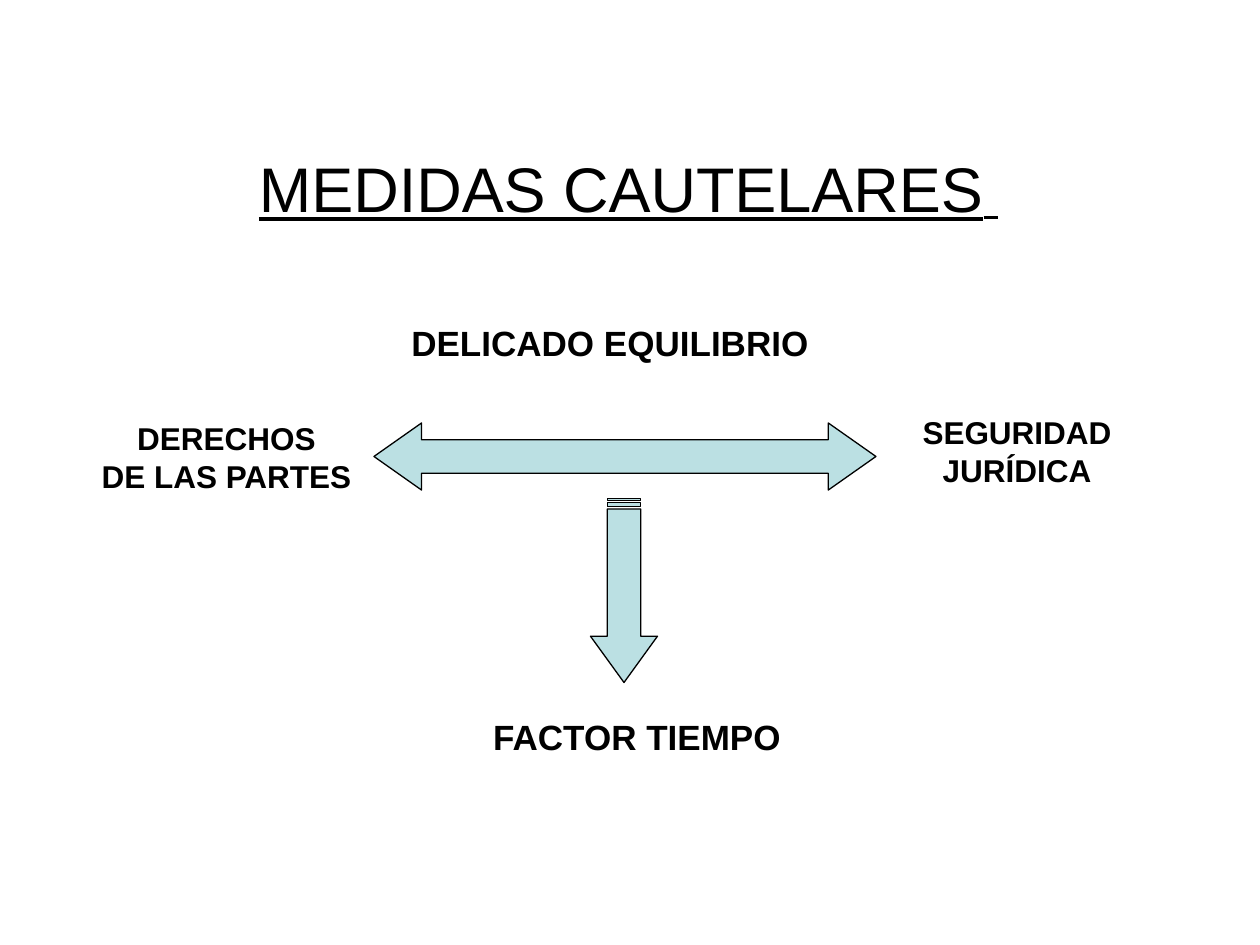
from dataclasses import dataclass

from pptx import Presentation
from pptx.dml.color import RGBColor
from pptx.enum.shapes import MSO_SHAPE
from pptx.enum.text import MSO_ANCHOR, PP_ALIGN
from pptx.slide import Slide
from pptx.util import Emu, Pt

CENTER = PP_ALIGN.CENTER
TOP = MSO_ANCHOR.TOP
MIDDLE = MSO_ANCHOR.MIDDLE
DOUBLE = MSO_SHAPE.LEFT_RIGHT_ARROW
STRIPED = MSO_SHAPE.STRIPED_RIGHT_ARROW
SCALE = 914400 / 126


@dataclass(frozen=True)
class Theme:
    font: str = "Arial"
    ink: RGBColor = RGBColor(0, 0, 0)
    fill: RGBColor = RGBColor(0xBB, 0xE0, 0xE3)
    line: float = 0.75
    title: int = 36
    space: int = 30
    large: int = 20
    small: int = 18


@dataclass(frozen=True)
class Box:
    left: int
    top: int
    width: int
    height: int


@dataclass(frozen=True)
class Run:
    text: str
    size: int
    bold: bool = True
    under: bool = False


@dataclass(frozen=True)
class Label:
    box: Box
    lines: list[list[Run]]
    wrap: bool = True
    anchor: MSO_ANCHOR = TOP


@dataclass(frozen=True)
class Arrow:
    box: Box
    kind: MSO_SHAPE
    head: float
    turn: int = 0


THEME = Theme()

LABELS = [
    Label(
        Box(147, 129, 963, 116),
        [[
            Run("MEDIDAS CAUTELARES", THEME.title, False, True),
            Run(" ", THEME.space, False, True),
        ]],
        anchor=MIDDLE,
    ),
    Label(Box(354, 315, 512, 55), [[Run("DELICADO EQUILIBRIO", THEME.large)]]),
    Label(
        Box(88, 413, 277, 89),
        [[Run("DERECHOS", THEME.small)], [Run("DE LAS PARTES", THEME.small)]],
        wrap=False,
    ),
    Label(
        Box(906, 407, 222, 89),
        [[Run("SEGURIDAD", THEME.small)], [Run("JURÍDICA", THEME.small)]],
    ),
    Label(Box(444, 709, 386, 55), [[Run("FACTOR TIEMPO", THEME.large)]]),
]

ARROWS = [
    Arrow(Box(374, 423, 502, 67), DOUBLE, 0.71),
    Arrow(Box(532, 557, 184, 67), STRIPED, 0.69, 90),
]


def px(size: int) -> Emu:
    return Emu(round(size * SCALE))


def place(box: Box) -> tuple[Emu, Emu, Emu, Emu]:
    return px(box.left), px(box.top), px(box.width), px(box.height)


def draw_label(slide: Slide, label: Label) -> None:
    frame = slide.shapes.add_textbox(*place(label.box)).text_frame
    frame.word_wrap = label.wrap
    frame.vertical_anchor = label.anchor
    for index, line in enumerate(label.lines):
        para = frame.add_paragraph() if index else frame.paragraphs[0]
        para.alignment = CENTER
        for item in line:
            run = para.add_run()
            run.text = item.text
            font = run.font
            font.name = THEME.font
            font.size = Pt(item.size)
            font.bold = item.bold
            font.underline = item.under
            font.color.rgb = THEME.ink


def draw_arrow(slide: Slide, arrow: Arrow) -> None:
    shape = slide.shapes.add_shape(arrow.kind, *place(arrow.box))
    shape.adjustments[0] = 0.5
    shape.adjustments[1] = arrow.head
    shape.rotation = arrow.turn
    shape.shadow.inherit = False
    shape.fill.solid()
    shape.fill.fore_color.rgb = THEME.fill
    shape.line.color.rgb = THEME.ink
    shape.line.width = Pt(THEME.line)


def main() -> None:
    deck = Presentation()
    deck.slide_width = px(1260)
    deck.slide_height = px(945)
    slide = deck.slides.add_slide(deck.slide_layouts[6])
    for label in LABELS:
        draw_label(slide, label)
    for arrow in ARROWS:
        draw_arrow(slide, arrow)
    deck.save("out.pptx")


if __name__ == "__main__":
    main()
